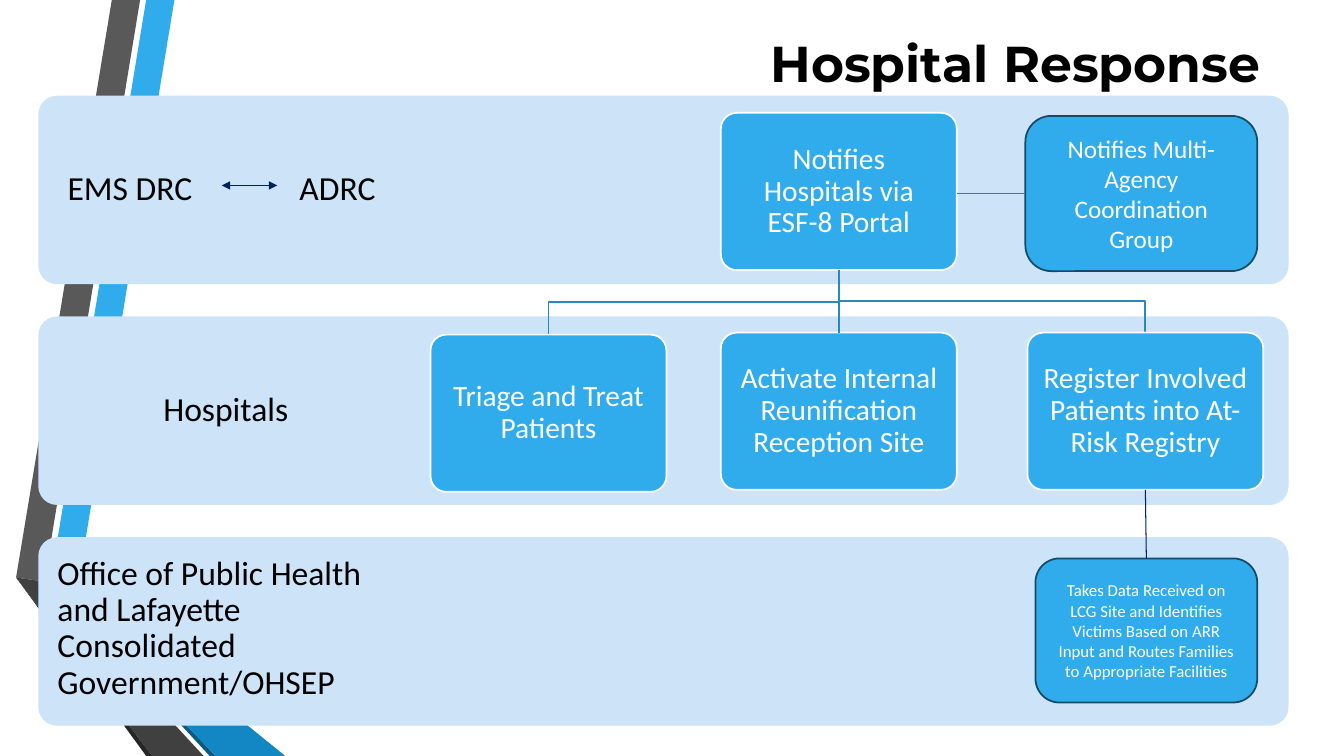
"""Builds the Hospital Response slide: three agency bands with linked task cards."""
from lxml import etree
from pptx import Presentation
from pptx.dml.color import RGBColor
from pptx.enum.shapes import MSO_CONNECTOR, MSO_SHAPE
from pptx.enum.text import MSO_ANCHOR, PP_ALIGN
from pptx.oxml.ns import qn
from pptx.util import Pt

PX = 9144
ROUNDED = MSO_SHAPE.ROUNDED_RECTANGLE
STRAIGHT = MSO_CONNECTOR.STRAIGHT
LEFT, CENTER = PP_ALIGN.LEFT, PP_ALIGN.CENTER
TOP, MIDDLE = MSO_ANCHOR.TOP, MSO_ANCHOR.MIDDLE
TOP_SIDE, LEFT_SIDE, BOTTOM_SIDE = 0, 1, 2
COLORS = {
    "black": "000000", "white": "FFFFFF", "band": "CDE3F8", "blue": "30ACEC",
    "tree": "268ABD", "note_edge": "154B67", "link": "1287C3", "navy": "002060",
    "gray": "595959", "dark_gray": "404040", "charcoal": "262626", "deep_blue": "0C5A82",
}
RGB = {name: RGBColor.from_string(value) for name, value in COLORS.items()}

prs = Presentation()
prs.slide_width, prs.slide_height = 1333 * PX, 750 * PX
slide = prs.slides.add_slide(prs.slide_layouts[5])
shapes = slide.shapes


def outline(points, close):
    builder = shapes.build_freeform(*points[0], scale=PX)
    builder.add_line_segments(points[1:], close=close)
    freeform = builder.convert_to_shape()
    freeform.shadow.inherit = False
    return freeform


def write(shape, text, size, color, align=CENTER, anchor=MIDDLE, margins=(10, 5), spacing=0.9):
    frame = shape.text_frame
    frame.word_wrap = True
    frame.vertical_anchor = anchor
    frame.margin_left = frame.margin_right = margins[0] * PX
    frame.margin_top = frame.margin_bottom = margins[1] * PX
    frame.text = text
    paragraph = frame.paragraphs[0]
    paragraph.alignment, paragraph.line_spacing = align, spacing
    paragraph.font.name, paragraph.font.size = "Calibri", Pt(size)
    paragraph.font.color.rgb = RGB[color]


ribbons = [
    ("blue", [(50, 578), (77, 583), (173, 0), (145, 0)]),
    ("gray", [(139, 0), (111, 0), (16, 573), (44, 577)]),
    ("charcoal", [(16, 573), (145, 750), (151, 750)]),
    ("deep_blue", [(50, 579), (208, 750), (214, 750)]),
    ("link", [(50, 579), (214, 750), (283, 750), (77, 583), (50, 578)]),
    ("dark_gray", [(202, 750), (48, 583), (43, 578), (44, 577), (16, 573), (151, 750)]),
]
for color, points in ribbons:
    ribbon = outline(points, True)
    ribbon.fill.solid()
    ribbon.fill.fore_color.rgb = RGB[color]
    ribbon.line.fill.background()

title = shapes.title
title.left, title.top, title.width, title.height = 432 * PX, 28 * PX, 1150 * PX, 68 * PX
write(title, "Hospital Response", 36, "black", spacing=1.0)
title_font = title.text_frame.paragraphs[0].font
title_font.name, title_font.bold = "Montserrat", True

BAND_LEFT, BAND_TOP, BAND_PITCH, BAND_HEIGHT = 38, 95, 219, 187
for row in range(3):
    band = shapes.add_shape(
        ROUNDED, BAND_LEFT * PX, (BAND_TOP + row * BAND_PITCH) * PX, 1240 * PX, BAND_HEIGHT * PX)
    band.adjustments[0] = 0.1
    band.shadow.inherit = False
    band.fill.solid()
    band.fill.fore_color.rgb = RGB["band"]
    band.line.fill.background()

agencies = [
    ("EMS DRC", 0, 48, 172, LEFT, MIDDLE),
    ("ADRC", 0, 278, 132, LEFT, MIDDLE),
    ("Hospitals", 1, BAND_LEFT, 372, CENTER, MIDDLE),
    ("Office of Public Health and Lafayette Consolidated Government/OHSEP",
     2, BAND_LEFT, 372, LEFT, TOP),
]
for agency, row, left, width, align, anchor in agencies:
    label = shapes.add_textbox(
        left * PX, (BAND_TOP + row * BAND_PITCH) * PX, width * PX, BAND_HEIGHT * PX)
    write(label, agency, 24, "black", align, anchor, (19, 19))

TRUNK_X, TRUNK_TOP = 832, 268
for branch_x, bend_y, branch_bottom in [(544, 300, 332), (1136, 299, 330)]:
    branch = outline([(TRUNK_X, TRUNK_TOP), (TRUNK_X, bend_y),
                      (branch_x, bend_y), (branch_x, branch_bottom)], False)
    branch.fill.background()
    branch.line.color.rgb = RGB["tree"]
    branch.line.width = Pt(1.25)

CARD, NOTE = (0.1, "white", (9, 9), 0.9), (0.1667, "note_edge", (10, 5), 1.0)
tasks = [
    ("notify", "Notifies Hospitals via ESF-8 Portal", (715, 112, 234, 156), 21, CARD),
    ("triage", "Triage and Treat Patients", (427, 332, 234, 156), 21, CARD),
    ("reunify", "Activate Internal Reunification Reception Site", (715, 330, 234, 156), 21, CARD),
    ("register", "Register Involved Patients into At-Risk Registry",
     (1019, 330, 234, 156), 21, CARD),
    ("group", "Notifies Multi-Agency Coordination Group", (1017, 115, 230, 154), 18, NOTE),
    ("route", "Takes Data Received on LCG Site and Identifies Victims Based on ARR Input "
     "and Routes Families to Appropriate Facilities", (1027, 554, 220, 143), 12, NOTE),
]
cards = {}
for key, text, box, size, (rounding, edge, margins, spacing) in tasks:
    card = shapes.add_shape(ROUNDED, *(length * PX for length in box))
    card.adjustments[0] = rounding
    card.shadow.inherit = False
    card.fill.solid()
    card.fill.fore_color.rgb = RGB["blue"]
    card.line.color.rgb = RGB[edge]
    card.line.width = Pt(1.25)
    write(card, text, size, "white", margins=margins, spacing=spacing)
    cards[key] = card

links = [
    ((832, 268, 832, 330), "tree", 1.25, ("notify", BOTTOM_SIDE), ("reunify", TOP_SIDE), False),
    ((949, 192, 1017, 192), "link", 1.25, None, ("group", LEFT_SIDE), False),
    ((220, 184, 275, 184), "navy", 0.75, None, None, True),
    ((1136, 486, 1137, 554), "navy", 0.75, ("register", BOTTOM_SIDE), ("route", TOP_SIDE), False),
]
for ends, color, weight, source, target, arrows in links:
    link = shapes.add_connector(STRAIGHT, *(length * PX for length in ends))
    if source:
        link.begin_connect(cards[source[0]], source[1])
    if target:
        link.end_connect(cards[target[0]], target[1])
    link.line.color.rgb = RGB[color]
    link.line.width = Pt(weight)
    properties = link.element.spPr
    if arrows:
        for tip in ("a:headEnd", "a:tailEnd"):
            etree.SubElement(properties.find(qn("a:ln")), qn(tip), type="triangle")
    etree.SubElement(properties, qn("a:effectLst"))

prs.save("out.pptx")
